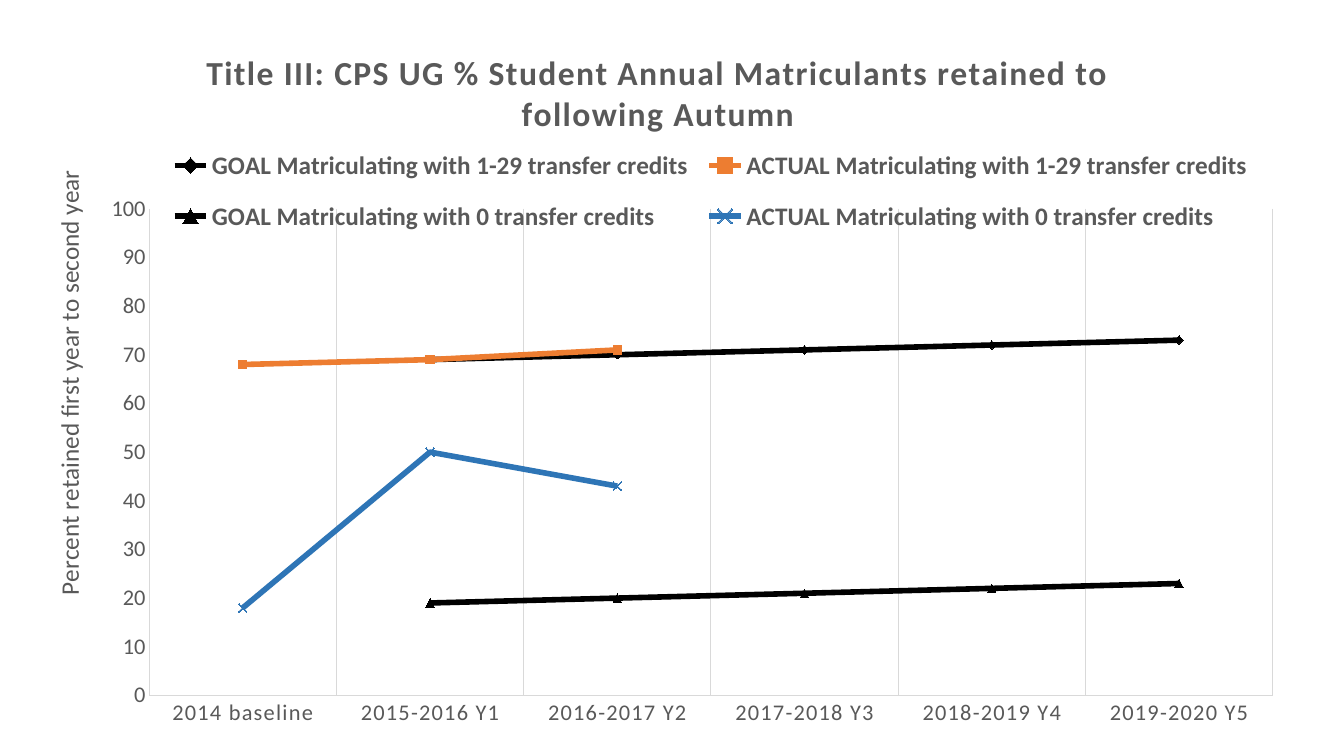
import pptx
import pptx.chart.data
import pptx.dml.color
import pptx.enum.chart
import pptx.oxml
import pptx.oxml.ns
import pptx.util

SLIDE_WIDTH, SLIDE_HEIGHT = pptx.util.Inches(13.33), pptx.util.Inches(7.5)
TYPEFACE, GREY, RULE = "Calibri", "595959", "D9D9D9"
YEARS = ["2014 baseline"] + [f"{2014 + n}-{2015 + n} Y{n}" for n in range(1, 6)]
RETENTION = [
    ("GOAL Matriculating with 1-29 transfer credits", [None, 69, 70, 71, 72, 73], "000000", "DIAMOND"),
    ("ACTUAL Matriculating with 1-29 transfer credits", [68, 69, 71, None, None, None], "ED7D31", "SQUARE"),
    ("GOAL Matriculating with 0 transfer credits", [None, 19, 20, 21, 22, 23], "000000", "TRIANGLE"),
    ("ACTUAL Matriculating with 0 transfer credits", [18, 50, 43, None, None, None], "2E75B6", "X"),
]


def rgb(code):
    """Turn a hex string into a colour."""
    return pptx.dml.color.RGBColor.from_string(code)


def style_font(font, size, bold=False):
    """Set the shared typeface and grey at a given size."""
    font.name, font.size, font.bold = TYPEFACE, pptx.util.Pt(size), bold
    font.color.rgb = rgb(GREY)


def style_line(line, color, width):
    """Set the colour and width of a line."""
    line.color.rgb, line.width = rgb(color), pptx.util.Pt(width)


def place(part, index, **shares):
    """Position a chart part by shares of the chart's size."""
    for old in part.findall(pptx.oxml.ns.qn("c:layout")):
        part.remove(old)
    settings = {"xMode": "edge", "yMode": "edge", **shares}
    if index == 0:
        settings = {"layoutTarget": "inner", **settings}
    body = "".join(f'<c:{key} val="{value}"/>' for key, value in settings.items())
    part.insert(index, pptx.oxml.parse_xml(
        f'<c:layout {pptx.oxml.ns.nsdecls("c")}><c:manualLayout>{body}</c:manualLayout></c:layout>'))


def add_title(owner, wording, size, bold, spacing, x, y):
    """Give a chart or an axis a placed title."""
    owner.has_title = True
    title = owner.chart_title if hasattr(owner, "chart_title") else owner.axis_title
    run = title.text_frame.paragraphs[0].add_run()
    run.text = wording
    style_font(run.font, size, bold)
    run._r.get_or_add_rPr().set("spc", str(spacing))
    place(title._element, 1, x=x, y=y)


def style_axis(axis, spacing):
    """Set the label font, letter spacing, line and ticks of an axis."""
    style_font(axis.tick_labels.font, 16)
    for properties in axis._element.xpath("./c:txPr//a:defRPr"):
        properties.set("spc", str(spacing))
    style_line(axis.format.line, RULE, 0.75)
    axis.major_tick_mark = axis.minor_tick_mark = pptx.enum.chart.XL_TICK_MARK.NONE


def style_series(series, color, marker):
    """Set the line and marker of a series."""
    series.smooth = False
    style_line(series.format.line, color, 4)
    series.marker.style = pptx.enum.chart.XL_MARKER_STYLE[marker]
    series.marker.size = 6
    series.marker.format.fill.solid()
    series.marker.format.fill.fore_color.rgb = rgb(color)
    style_line(series.marker.format.line, color, 0.75)


def add_retention_chart(slide):
    """Add the line chart of goals and actual retention."""
    data = pptx.chart.data.CategoryChartData()
    data.categories = YEARS
    for name, values, _, _ in RETENTION:
        data.add_series(name, values)
    chart = slide.shapes.add_chart(
        pptx.enum.chart.XL_CHART_TYPE.LINE_MARKERS,
        int(SLIDE_WIDTH * 0.016), int(SLIDE_HEIGHT * 0.03),
        int(SLIDE_WIDTH * 0.95), int(SLIDE_HEIGHT * 0.947), data).chart
    style_font(chart.font, 10)
    chart.plots[0].vary_by_categories = False
    for series, (_, _, color, marker) in zip(chart.plots[0].series, RETENTION):
        style_series(series, color, marker)

    years, percent = chart.category_axis, chart.value_axis
    style_axis(years, 100)
    years.has_major_gridlines = True
    style_line(years.major_gridlines.format.line, RULE, 0.75)
    style_axis(percent, 0)
    percent.has_major_gridlines = False
    percent.minimum_scale, percent.maximum_scale, percent.major_unit = 0, 100, 10

    add_title(chart, "Title III: CPS UG % Student Annual Matriculants retained to following Autumn",
              24, True, 100, 0.14, 0.03)
    add_title(percent, "Percent retained first year to second year", 18, False, 0, 0.02, 0.2)
    chart.has_legend = True
    chart.legend.position = pptx.enum.chart.XL_LEGEND_POSITION.TOP
    chart.legend.include_in_layout = False
    style_font(chart.legend.font, 18, True)
    place(chart.legend._element, 1, x=0.11, y=0.15, w=0.86, h=0.17)
    place(chart._chartSpace.chart.plotArea, 0, x=0.1, y=0.26, w=0.88, h=0.68)


def main():
    """Build and save the slide."""
    deck = pptx.Presentation()
    deck.slide_width, deck.slide_height = SLIDE_WIDTH, SLIDE_HEIGHT
    add_retention_chart(deck.slides.add_slide(deck.slide_layouts[6]))
    deck.save("out.pptx")


if __name__ == "__main__":
    main()
